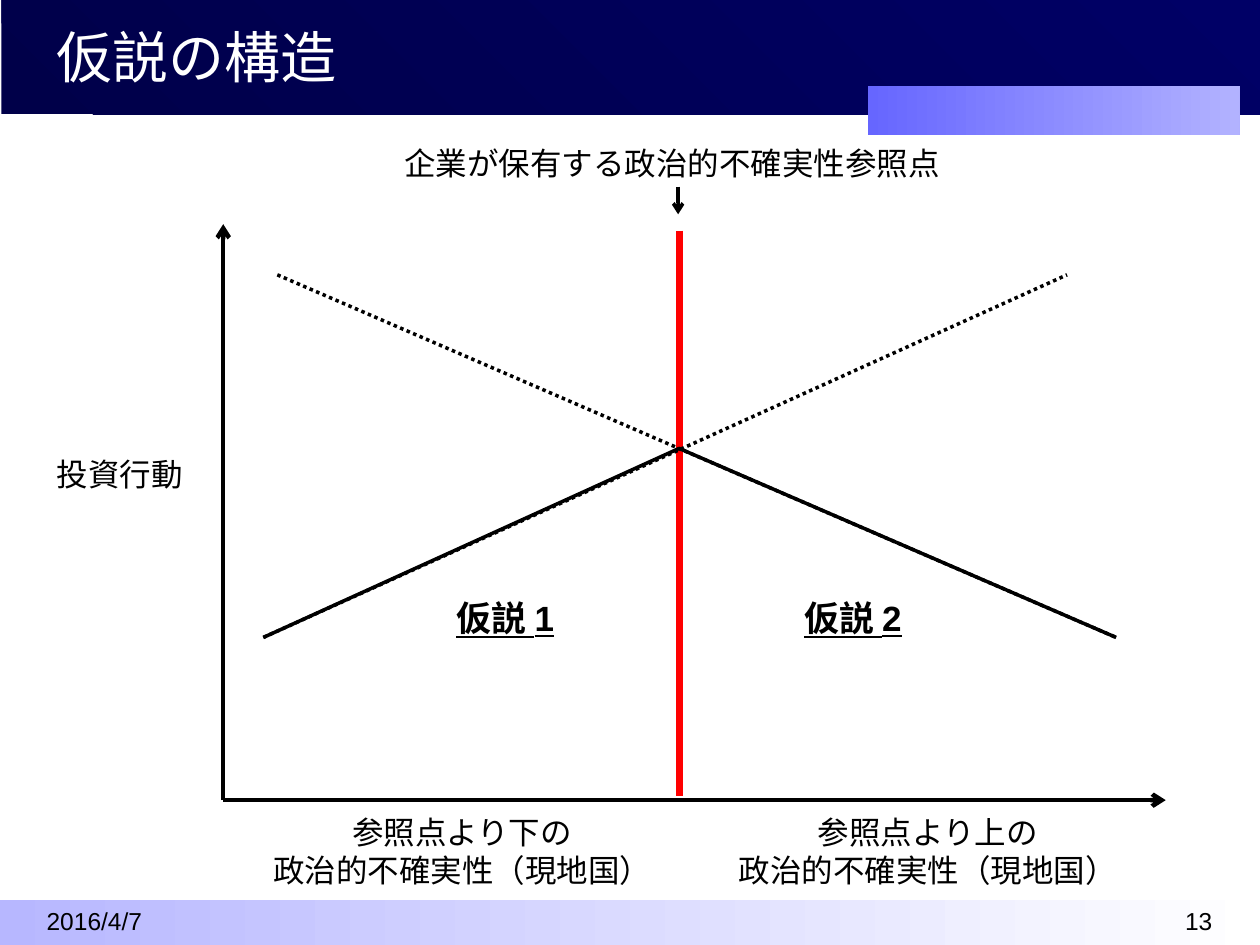
from typing import NamedTuple, Optional

import pptx
import pptx.dml.color
import pptx.enum.dml
import pptx.enum.shapes
import pptx.enum.text
import pptx.oxml.ns
import pptx.util
from lxml import etree
from pptx.dml.color import RGBColor
from pptx.util import Cm, Pt

BLACK = RGBColor(0x00, 0x00, 0x00)
WHITE = RGBColor(0xFF, 0xFF, 0xFF)
RED = RGBColor(0xFF, 0x00, 0x00)
NAVY_DARK = RGBColor(0x00, 0x00, 0x49)
NAVY = RGBColor(0x00, 0x00, 0x66)
VIOLET = RGBColor(0x66, 0x66, 0xFF)
VIOLET_PALE = RGBColor(0xB2, 0xB2, 0xFF)
LAVENDER = RGBColor(0xB7, 0xB7, 0xFF)

LEFT = pptx.enum.text.PP_ALIGN.LEFT
CENTER = pptx.enum.text.PP_ALIGN.CENTER
RIGHT = pptx.enum.text.PP_ALIGN.RIGHT
TOP = pptx.enum.text.MSO_ANCHOR.TOP
MIDDLE = pptx.enum.text.MSO_ANCHOR.MIDDLE
DOTTED = pptx.enum.dml.MSO_LINE.ROUND_DOT


class Box(NamedTuple):
    """Left, top, width and height in centimetres."""
    left: float
    top: float
    width: float
    height: float


class Point(NamedTuple):
    x: float
    y: float


class Band(NamedTuple):
    box: Box
    start: RGBColor
    end: RGBColor
    angle: float = 0


class Label(NamedTuple):
    box: Box
    lines: tuple[str, ...]
    size: float = 18
    align: pptx.enum.text.PP_ALIGN = LEFT
    anchor: pptx.enum.text.MSO_ANCHOR = TOP
    color: RGBColor = BLACK
    emphasis: bool = False


class Stroke(NamedTuple):
    start: Point
    end: Point
    width: float = 2
    color: RGBColor = BLACK
    dash: Optional[pptx.enum.dml.MSO_LINE] = None
    arrow: bool = False


# Slide decoration
BANDS = (
    Band(Box(0, 18.14, 25.4, 0.91), LAVENDER, WHITE),
    Band(Box(0.03, 0, 25.37, 2.31), NAVY_DARK, NAVY, 45),
    Band(Box(17.5, 1.73, 7.49, 0.99), VIOLET, VIOLET_PALE),
)

# Key points of the diagram
ORIGIN = Point(4.5, 16.13)
CROSSING = Point(13.69, 9.04)
LOW_LEFT = Point(5.31, 12.85)
LOW_RIGHT = Point(22.5, 12.85)
HIGH_LEFT = Point(5.59, 5.54)
HIGH_RIGHT = Point(21.51, 5.54)

STROKES = (
    # Reference point
    Stroke(Point(CROSSING.x, 4.65), Point(CROSSING.x, 16.05), 4, RED),
    # Hypotheses and their extensions
    Stroke(LOW_LEFT, CROSSING),
    Stroke(CROSSING, LOW_RIGHT),
    Stroke(HIGH_LEFT, LOW_RIGHT, dash=DOTTED),
    Stroke(LOW_LEFT, HIGH_RIGHT, dash=DOTTED),
    # Axes
    Stroke(ORIGIN, Point(ORIGIN.x, 4.52), 2.5, arrow=True),
    Stroke(ORIGIN, Point(23.5, ORIGIN.y), 2.5, arrow=True),
    # Pointer from the caption to the reference point
    Stroke(Point(13.67, 3.76), Point(13.67, 4.32), arrow=True),
)

HYPOTHESES = tuple(
    Label(Box(left, 11.91, 2.59, 1.12), (f"仮説 {number}",), 20, CENTER,
          emphasis=True)
    for number, left in ((1, 8.89), (2, 15.9))
)
RANGES = tuple(
    Label(Box(left, 16.26, 8.41, 1.8),
          (f"参照点より{side}の", "政治的不確実性（現地国）"), align=CENTER)
    for side, left in (("下", 5.11), ("上", 14.5))
)
LABELS = (
    Label(Box(0.89, -0.05, 20.6, 2.36), ("仮説の構造",), 32,
          anchor=MIDDLE, color=WHITE),
    Label(Box(0.69, 18.19, 5.92, 0.74), ("2016/4/7",), 14, anchor=MIDDLE),
    Label(Box(18.77, 18.19, 5.92, 0.74), ("13",), 14, RIGHT, MIDDLE),
    Label(Box(0.89, 9.04, 4.19, 1.02), ("投資行動",)),
    Label(Box(7.9, 2.77, 11.96, 1.02), ("企業が保有する政治的不確実性参照点",)),
) + RANGES + HYPOTHESES


def draw_band(shapes, band: Band) -> None:
    rectangle = shapes.add_shape(
        pptx.enum.shapes.MSO_SHAPE.RECTANGLE, *map(Cm, band.box))
    rectangle.shadow.inherit = False
    rectangle.line.fill.background()
    rectangle.fill.gradient()
    rectangle.fill.gradient_angle = band.angle
    for stop, color in zip(rectangle.fill.gradient_stops,
                           (band.start, band.end)):
        stop.color.rgb = color


def draw_stroke(shapes, stroke: Stroke) -> None:
    connector = shapes.add_connector(
        pptx.enum.shapes.MSO_CONNECTOR.STRAIGHT,
        *map(Cm, stroke.start + stroke.end))
    connector.line.width = Pt(stroke.width)
    connector.line.color.rgb = stroke.color
    if stroke.dash is not None:
        connector.line.dash_style = stroke.dash
    properties = connector.element.spPr
    if stroke.arrow:
        outline = properties.find(pptx.oxml.ns.qn("a:ln"))
        etree.SubElement(outline, pptx.oxml.ns.qn("a:tailEnd"), type="arrow")
    etree.SubElement(properties, pptx.oxml.ns.qn("a:effectLst"))


def draw_label(shapes, label: Label) -> None:
    frame = shapes.add_textbox(*map(Cm, label.box)).text_frame
    frame.word_wrap = True
    frame.vertical_anchor = label.anchor
    frame.text = "\n".join(label.lines)
    for paragraph in frame.paragraphs:
        paragraph.alignment = label.align
        paragraph.font.name = "Arial"
        paragraph.font.size = Pt(label.size)
        paragraph.font.color.rgb = label.color
        if label.emphasis:
            paragraph.font.bold = True
            paragraph.font.underline = True


def main() -> None:
    presentation = pptx.Presentation()
    presentation.slide_width = Cm(25.4)
    presentation.slide_height = Cm(19.05)
    shapes = presentation.slides.add_slide(
        presentation.slide_layouts[6]).shapes
    for band in BANDS:
        draw_band(shapes, band)
    for stroke in STROKES:
        draw_stroke(shapes, stroke)
    for label in LABELS:
        draw_label(shapes, label)
    presentation.save("out.pptx")


if __name__ == "__main__":
    main()
